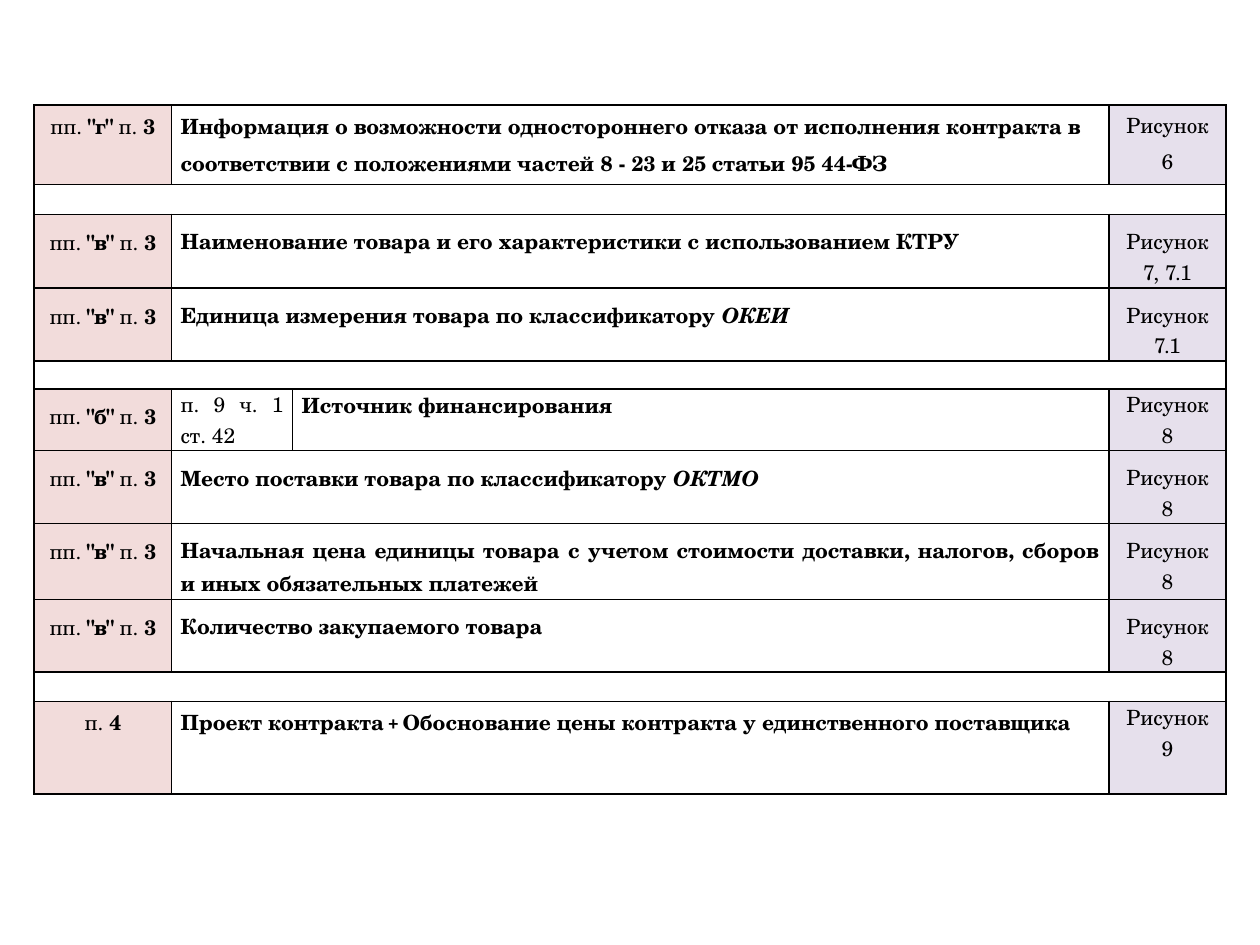
from lxml import etree
from pptx import Presentation
from pptx.dml.color import RGBColor
from pptx.enum.text import PP_ALIGN
from pptx.oxml.ns import qn
from pptx.util import Cm, Pt

LEFT, CENTER, JUSTIFY = PP_ALIGN.LEFT, PP_ALIGN.CENTER, PP_ALIGN.JUSTIFY
COLORS = {"text": "000000", "border": "000000", "label": "F2DCDB",
          "body": "FFFFFF", "figure": "E6E0EC"}
FONT = "TeX Gyre Schola"
COL_WIDTHS = [2.77, 2.44, 16.46, 2.35]
SIDE, DROP, LABEL_SIDE, LABEL_DROP = 0.18, 0.22, 0.25, 0.13
WIDE = 1.15

ROWS = [
    dict(height=1.6, letter="г", figure="6", drop=0, label_drop=0, align=LEFT,
         spacing=WIDE, figure_spacing=WIDE,
         body=["Информация о возможности одностороннего отказа от исполнения контракта в "
               "соответствии с положениями частей 8 - 23 и 25 статьи 95 44-ФЗ"]),
    dict(height=0.6),
    dict(height=1.49, letter="в", figure="7, 7.1",
         body=["Наименование товара и его характеристики с использованием КТРУ"]),
    dict(height=1.45, letter="в", figure="7.1",
         body=["Единица измерения товара по классификатору ", ("ОКЕИ", {"italic": True})]),
    dict(height=0.56),
    dict(height=1.23, letter="б", figure="8", drop=0, article="п. 9 ч. 1 ст. 42",
         body=["Источник финансирования"]),
    dict(height=1.45, letter="в", figure="8",
         body=["Место поставки товара по классификатору ", ("ОКТМО", {"italic": True})]),
    dict(height=1.53, letter="в", figure="8",
         body=["Начальная цена единицы товара с учетом стоимости доставки, "
               "налогов, сборов и иных обязательных платежей"]),
    dict(height=1.45, letter="в", figure="8", body=["Количество закупаемого товара"]),
    dict(height=0.59),
    dict(height=1.87, letter=None, figure="9", drop=0, label_drop=0, spacing=WIDE,
         body=["Проект контракта", (" + ", {"font": "Calibri", "size": 11}),
               "Обоснование цены контракта у единственного поставщика"]),
]


def add_run(p, text, size=12, font=FONT, bold=False, italic=False):
    r = p.add_run()
    r.text = text
    f = r.font
    f.size, f.name, f.bold, f.italic = Pt(size), font, bold, italic
    f.color.rgb = RGBColor.from_string(COLORS["text"])


def write_cell(cell, runs, align=CENTER, spacing=1.0, side=SIDE, drop=0):
    cell.margin_left = cell.margin_right = Cm(side)
    cell.margin_top, cell.margin_bottom = Cm(drop), Cm(0)
    p = cell.text_frame.paragraphs[0]
    p.alignment, p.line_spacing = align, spacing
    for text, style in runs:
        add_run(p, text, **style)


def style_cell(cell, color):
    tcPr = cell._tc.get_or_add_tcPr()
    for side in ("a:lnL", "a:lnR", "a:lnT", "a:lnB"):
        ln = etree.SubElement(tcPr, qn(side), w=str(Pt(1)))
        fill = etree.SubElement(ln, qn("a:solidFill"))
        etree.SubElement(fill, qn("a:srgbClr"), val=COLORS["border"])
    cell.fill.solid()
    cell.fill.fore_color.rgb = RGBColor.from_string(COLORS[color])


def label_runs(letter):
    bold = {"bold": True}
    if letter is None:
        return [("п. ", {}), ("4", bold)]
    return [("пп. ", {}), (f'"{letter}"', bold), (" п. ", {}), ("3", bold)]


def body_runs(parts):
    pairs = [(part, {}) if isinstance(part, str) else part for part in parts]
    return [(text, {"bold": True, **style}) for text, style in pairs]


def fill_separator(cells):
    for cell in cells:
        style_cell(cell, "body")
        write_cell(cell, [])
        p = cell.text_frame.paragraphs[0]
        etree.SubElement(p._p, qn("a:endParaRPr"), sz="800")
    cells[0].merge(cells[-1])


def fill_row(cells, row):
    for cell, color in zip(cells, ("label", "body", "body", "figure")):
        style_cell(cell, color)
    label, first, second, figure = cells
    drop = row.get("drop", DROP)
    label_drop = row.get("label_drop", LABEL_DROP)
    write_cell(label, label_runs(row["letter"]), spacing=WIDE,
               side=LABEL_SIDE if label_drop else SIDE, drop=label_drop)
    if "article" in row:
        write_cell(first, [(row["article"], {})], align=JUSTIFY)
        body = second
    else:
        first.merge(second)
        body = first
    write_cell(body, body_runs(row["body"]), align=row.get("align", JUSTIFY),
               spacing=row.get("spacing", 1.0), drop=drop)
    write_cell(figure, [(f"Рисунок {row['figure']}", {})],
               spacing=row.get("figure_spacing", 1.0), drop=drop)


def add_requirements_table(s):
    heights = [row["height"] for row in ROWS]
    table = s.shapes.add_table(len(ROWS), len(COL_WIDTHS), Cm(0.69), Cm(2.12),
                               Cm(sum(COL_WIDTHS)), Cm(sum(heights))).table
    table.first_row = table.horz_banding = False
    for column, width in zip(table.columns, COL_WIDTHS):
        column.width = Cm(width)
    for table_row, row in zip(table.rows, ROWS):
        table_row.height = Cm(row["height"])
        cells = list(table_row.cells)
        if "body" in row:
            fill_row(cells, row)
        else:
            fill_separator(cells)


def main():
    prs = Presentation()
    prs.slide_width, prs.slide_height = Cm(25.4), Cm(19.05)
    s = prs.slides.add_slide(prs.slide_layouts[6])
    add_requirements_table(s)
    prs.save("out.pptx")


if __name__ == "__main__":
    main()
